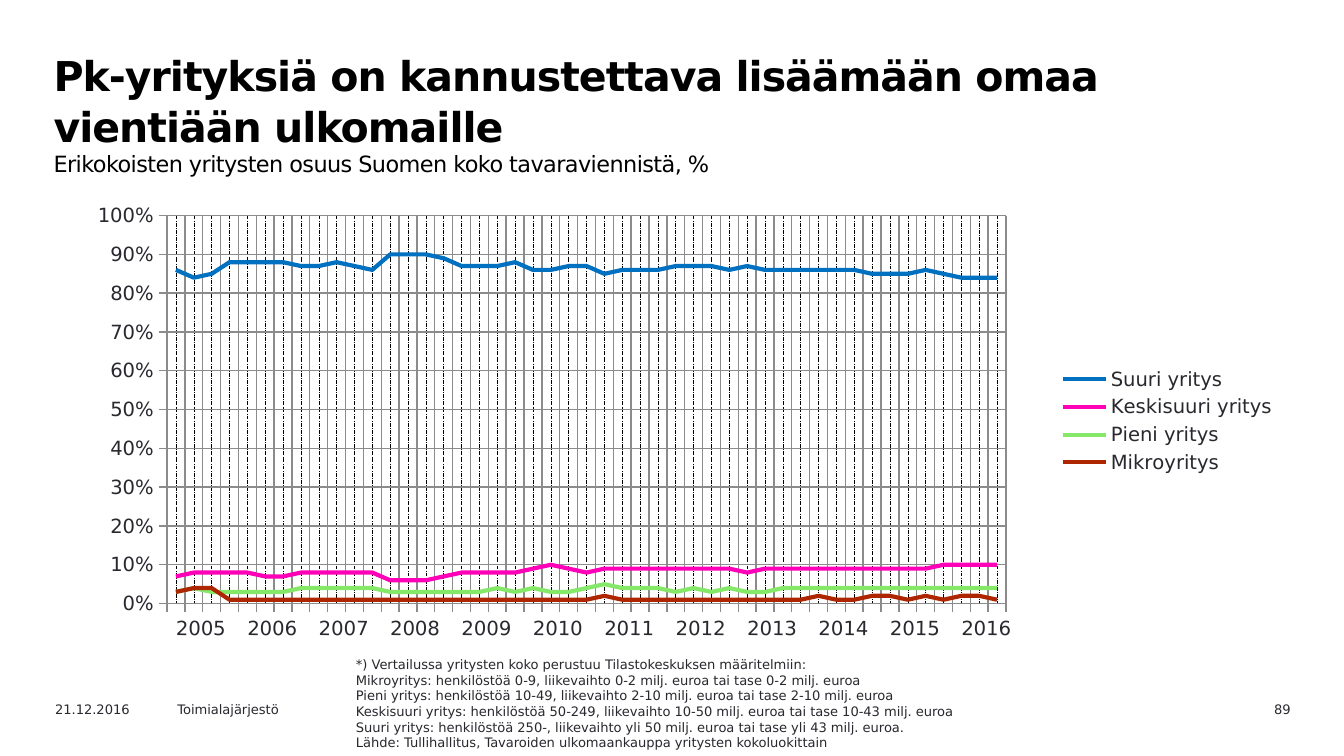
"""Build a slide on the shares of Finnish goods exports by company size."""
from pptx import Presentation, util as u
from pptx.chart import data as cd
from pptx.dml import color as dc
from pptx.enum import chart as ch, dml, text
from pptx.oxml import parse_xml
from pptx.oxml.ns import nsdecls, qn

Pt = u.Pt
FONT = "DejaVu Sans"
COLORS = {
    "text": "29282E", "title": "000000", "grid": "8B8B8C",
    "Suuri yritys": "0070C0", "Keskisuuri yritys": "FF00B8",
    "Pieni yritys": "85E869", "Mikroyritys": "AE2600",
}
QUARTERS = 47
PERCENTS = {
    "Suuri yritys": [
        86, 84, 85, 88, 88, 88, 88, 87, 87, 88, 87, 86, 90, 90, 90, 89,
        87, 87, 87, 88, 86, 86, 87, 87, 85, 86, 86, 86, 87, 87, 87, 86,
        87, 86, 86, 86, 86, 86, 86, 85, 85, 85, 86, 85, 84, 84, 84],
    "Keskisuuri yritys": [
        7, 8, 8, 8, 8, 7, 7, 8, 8, 8, 8, 8, 6, 6, 6, 7,
        8, 8, 8, 8, 9, 10, 9, 8, 9, 9, 9, 9, 9, 9, 9, 9,
        8, 9, 9, 9, 9, 9, 9, 9, 9, 9, 9, 10, 10, 10, 10],
    "Pieni yritys": [
        3, 4, 3, 3, 3, 3, 3, 4, 4, 4, 4, 4, 3, 3, 3, 3,
        3, 3, 4, 3, 4, 3, 3, 4, 5, 4, 4, 4, 3, 4, 3, 4,
        3, 3, 4, 4, 4, 4, 4, 4, 4, 4, 4, 4, 4, 4, 4],
    "Mikroyritys": [
        3, 4, 4, 1, 1, 1, 1, 1, 1, 1, 1, 1, 1, 1, 1, 1,
        1, 1, 1, 1, 1, 1, 1, 1, 2, 1, 1, 1, 1, 1, 1, 1,
        1, 1, 1, 1, 2, 1, 1, 2, 2, 1, 2, 1, 2, 2, 1],
}
NOTES = [
    "*) Vertailussa yritysten koko perustuu Tilastokeskuksen määritelmiin:",
    "Mikroyritys: henkilöstöä 0-9, liikevaihto 0-2 milj. euroa tai tase 0-2 milj. euroa",
    "Pieni yritys: henkilöstöä 10-49, liikevaihto 2-10 milj. euroa tai tase 2-10 milj. euroa",
    "Keskisuuri yritys: henkilöstöä 50-249, liikevaihto 10-50 milj. euroa tai tase 10-43 milj. euroa",
    "Suuri yritys: henkilöstöä 250-, liikevaihto yli 50 milj. euroa tai tase yli 43 milj. euroa.",
    "Lähde: Tullihallitus, Tavaroiden ulkomaankauppa yritysten kokoluokittain",
]


def rgb(name):
    return dc.RGBColor.from_string(COLORS[name])


def set_font(font, size, color="text", bold=False):
    for key, value in {"name": FONT, "size": Pt(size), "bold": bold}.items():
        setattr(font, key, value)
    font.color.rgb = rgb(color)


def place(sp, left, top, width, height):
    box = {"left": left, "top": top, "width": width, "height": height}
    for key, value in box.items():
        setattr(sp, key, Pt(value))


def fill_frame(tf, lines):
    frame = {"word_wrap": True, "auto_size": text.MSO_AUTO_SIZE.NONE,
             "vertical_anchor": text.MSO_ANCHOR.TOP}
    for key, value in frame.items():
        setattr(tf, key, value)
    for i, (line, fmt, para, spacing) in enumerate(lines):
        p = tf.paragraphs[0] if i == 0 else tf.add_paragraph()
        pPr = p._p.get_or_add_pPr()
        pPr.set("marL", "0")
        pPr.set("indent", "0")
        pPr.append(parse_xml(f"<a:buNone {nsdecls('a')}/>"))
        base = {"alignment": text.PP_ALIGN.LEFT, "space_before": Pt(0)}
        for key, value in {**base, **para}.items():
            setattr(p, key, value)
        r = p.add_run()
        r.text = line
        set_font(r.font, **fmt)
        if spacing:
            r._r.get_or_add_rPr().set("spc", str(spacing))


def add_title(s):
    sp = s.shapes.title
    place(sp, 21.5, 23, 640, 51)
    fill_frame(sp.text_frame, [
        ("Pk-yrityksiä on kannustettava lisäämään omaa vientiään ulkomaille",
         {"size": 22, "color": "title", "bold": True}, {"line_spacing": Pt(27)}, -50),
        ("Erikokoisten yritysten osuus Suomen koko tavaraviennistä, %",
         {"size": 12, "color": "title"}, {"line_spacing": 1.0}, -30),
    ])


def add_notes(s):
    sp = s.placeholders[1]
    place(sp, 183.5, 348, 497.5, 32.5)
    fill_frame(sp.text_frame,
               [(line, {"size": 7}, {"line_spacing": Pt(8.4)}, 0) for line in NOTES])


def add_footer(s, line, left, width, align=text.PP_ALIGN.LEFT):
    sp = s.shapes.add_textbox(Pt(left), Pt(372.5), Pt(width), Pt(13))
    fill_frame(sp.text_frame, [(line, {"size": 7}, {"alignment": align}, 0)])


def set_line(line, color, width, dash=None):
    line.color.rgb = rgb(color)
    line.width = Pt(width)
    line.dash_style = dash


def style_axis(axis):
    axis.has_major_gridlines = True
    axis.major_tick_mark = ch.XL_TICK_MARK.OUTSIDE
    axis.minor_tick_mark = ch.XL_TICK_MARK.NONE
    set_font(axis.tick_labels.font, 10.5)
    set_line(axis.format.line, "grid", 0.75)
    set_line(axis.major_gridlines.format.line, "grid", 0.75)


def add_center_lines(chart):
    chart.category_axis.has_minor_gridlines = True
    grid = chart.element.xpath(".//c:catAx/c:minorGridlines")[0]
    grid.append(parse_xml(
        f'<c:spPr {nsdecls("c", "a")}><a:ln w="3175"><a:solidFill>'
        f'<a:srgbClr val="{COLORS["title"]}"/></a:solidFill>'
        '<a:prstDash val="lgDashDot"/></a:ln></c:spPr>'))


def set_plot_layout(chart, **box):
    plot = chart.element.xpath(".//c:plotArea")[0]
    for old in plot.findall(qn("c:layout")):
        plot.remove(old)
    modes = "".join(f'<c:{k}Mode val="edge"/>' for k in "xy")
    sizes = "".join(f'<c:{k} val="{v}"/>' for k, v in box.items())
    plot.insert(0, parse_xml(
        f'<c:layout {nsdecls("c")}><c:manualLayout><c:layoutTarget val="inner"/>'
        f'{modes}{sizes}</c:manualLayout></c:layout>'))


def add_share_chart(s):
    data = cd.CategoryChartData(number_format="0%")
    data.categories = [str(2005 + q // 4) if q % 4 == 0 else "" for q in range(QUARTERS)]
    for name, values in PERCENTS.items():
        data.add_series(name, [v / 100 for v in values])
    chart = s.shapes.add_chart(ch.XL_CHART_TYPE.LINE, Pt(30), Pt(106),
                               Pt(661), Pt(239), data).chart
    set_font(chart.font, 10.5)
    chart.has_title = False
    chart.has_legend = True
    chart.legend.position = ch.XL_LEGEND_POSITION.RIGHT
    chart.legend.include_in_layout = False
    set_font(chart.legend.font, 10.5)
    chart.plots[0].vary_by_categories = False
    for ser in chart.plots[0].series:
        ser.smooth = False
        ser.marker.style = ch.XL_MARKER_STYLE.NONE
        set_line(ser.format.line, ser.name, 2.25, dml.MSO_LINE.SOLID)
    for axis in (chart.category_axis, chart.value_axis):
        style_axis(axis)
    scale = {"minimum_scale": 0, "maximum_scale": 1, "major_unit": 0.1}
    for key, value in scale.items():
        setattr(chart.value_axis, key, value)
    chart.value_axis.tick_labels.number_format = "0%"
    chart.value_axis.tick_labels.number_format_is_linked = False
    add_center_lines(chart)
    chart.element.xpath(".//c:catAx/c:txPr/a:bodyPr")[0].set("rot", "60000")
    set_plot_layout(chart, x=0.09, y=0.04, w=0.68, h=0.87)


def main():
    prs = Presentation()
    prs.slide_width, prs.slide_height = Pt(720), Pt(405)
    s = prs.slides.add_slide(prs.slide_layouts[1])
    add_footer(s, "89", 631, 67.5, text.PP_ALIGN.RIGHT)
    add_footer(s, "21.12.2016", 22.5, 72)
    add_footer(s, "Toimialajärjestö", 88, 102)
    add_notes(s)
    add_title(s)
    add_share_chart(s)
    prs.save("out.pptx")


if __name__ == "__main__":
    main()
